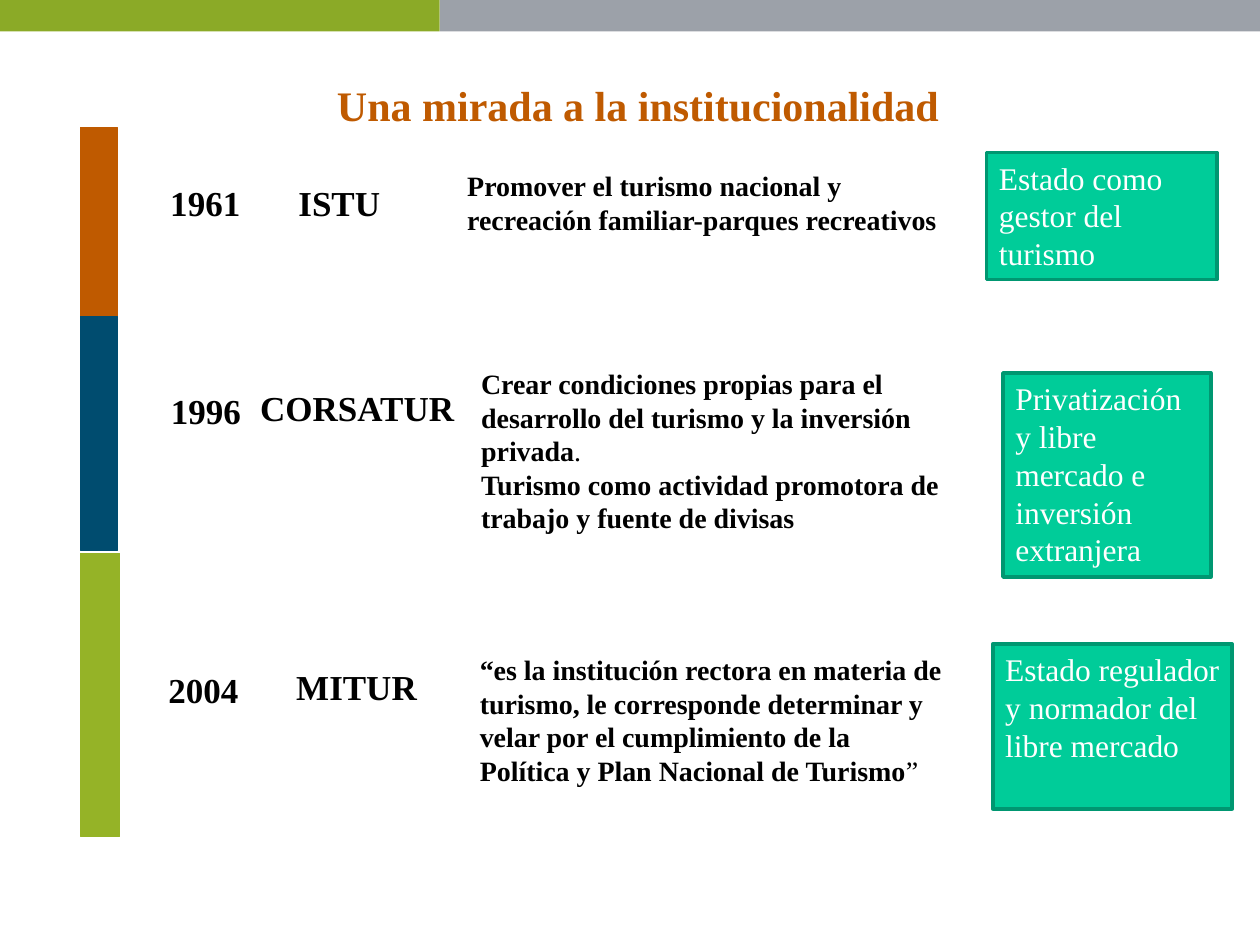
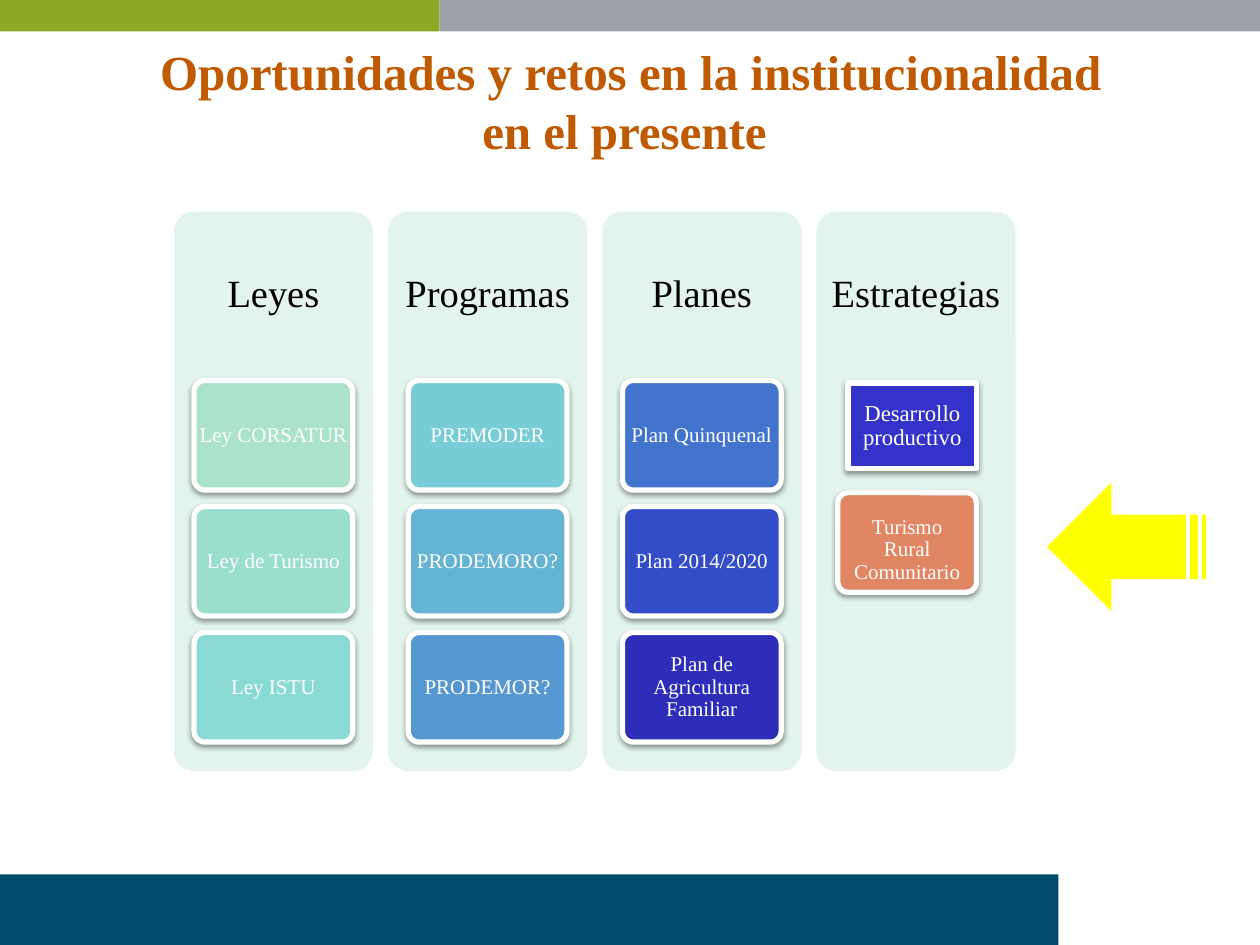
from lxml import etree
from pptx import Presentation
from pptx.dml.color import RGBColor as Rgb
from pptx.enum.shapes import MSO_SHAPE as Shape
from pptx.enum.text import MSO_ANCHOR as Anchor, PP_ALIGN as Align
from pptx.oxml.ns import qn
from pptx.util import Inches, Pt

FONT = "Times New Roman"
COLORS = {
    "orange": "BF5A00", "navy": "004C6F", "lime": "95B327",
    "band_green": "8BAA27", "band_grey": "9CA1A9",
    "mint": "00CC99", "mint_edge": "009771", "panel": "E2F4EC",
    "indigo": "3333CC", "coral": "E08662", "yellow": "FFFF00",
    "white": "FFFFFF", "black": "000000",
}

CENTERED = {"alignment": Align.CENTER}
TIGHT = {"alignment": Align.CENTER, "line_spacing": 0.9}
SPACIOUS = {"alignment": Align.CENTER, "line_spacing": 1.5, "space_before": Pt(3)}
TITLE = {"alignment": Align.CENTER, "space_before": Pt(4)}

TIMELINE_BARS = [
    ((0.64, 1.01, 0.29, 1.5), "orange"),
    ((0.64, 4.39, 0.31, 2.25), "lime"),
    ((0.64, 2.51, 0.29, 1.86), "navy"),
]
YEARS = [
    ("1961", (1.06, 1.39, 1.14, 0.43)),
    ("1996", (1.1, 3.04, 1.07, 0.43)),
    ("2004", (1.15, 5.26, 0.93, 0.43)),
]
INSTITUTIONS = [
    ("ISTU", (2.27, 1.39, 1.13, 0.43), {}),
    ("CORSATUR", (1.78, 3.02, 2.11, 0.43), CENTERED),
    ("MITUR", (2.17, 5.23, 1.32, 0.43), CENTERED),
]
MISSIONS = [
    ((3.61, 1.29, 4.05, 0.64), [
        [("Promover el turismo nacional y recreación familiar-parques recreativos", True)],
    ]),
    ((3.72, 2.86, 4.1, 1.45), [
        [("Crear condiciones propias para el desarrollo del turismo y la inversión privada", True),
         (".", False)],
        [("Turismo como actividad promotora de trabajo y fuente de divisas", True)],
    ]),
    ((3.71, 5.13, 3.87, 1.18), [
        [("“es la institución rectora en materia de turismo, le corresponde determinar y "
          "velar por el cumplimiento de la Política y Plan Nacional de Turismo", True),
         ("”", False)],
    ]),
]
STATE_ROLES = [
    ("Estado como gestor del turismo", (7.83, 1.21, 1.83, 1.01)),
    ("Privatización y libre mercado e inversión extranjera", (7.96, 2.96, 1.65, 1.62)),
    ("Estado regulador y normador del libre mercado", (7.88, 5.11, 1.9, 1.31)),
]
COLUMNS = [
    ("Leyes", [("Ley CORSATUR", "AAE2CA"), ("Ley de Turismo", "9ADECD"), ("Ley ISTU", "89DAD4")]),
    ("Programas", [("PREMODER", "78CCD6"), ("PRODEMORO?", "66B4D3"), ("PRODEMOR?", "5597D0")]),
    ("Planes", [("Plan Quinquenal", "4374CD"), ("Plan 2014/2020", "334DC8"),
                ("Plan de Agricultura Familiar", "2D2DB9")]),
    ("Estrategias", []),
]


def color(name):
    return Rgb.from_string(COLORS.get(name, name))


def apply(target, values):
    for name, value in values.items():
        setattr(target, name, value)


def write(shape, content, size, ink="black", bold=False, layout=None,
          anchor=Anchor.TOP, inset=(0.1, 0.05)):
    frame = shape.text_frame
    across, down = map(Inches, inset)
    apply(frame, {"word_wrap": True, "vertical_anchor": anchor,
                  "margin_left": across, "margin_right": across,
                  "margin_top": down, "margin_bottom": down})
    paragraphs = [[(content, bold)]] if isinstance(content, str) else content
    for index, spans in enumerate(paragraphs):
        para = frame.add_paragraph() if index else frame.paragraphs[0]
        apply(para, {"alignment": Align.LEFT, **(layout or {})})
        for words, heavy in spans:
            span = para.add_run()
            span.text = words
            apply(span.font, {"name": FONT, "size": Pt(size), "bold": heavy})
            span.font.color.rgb = color(ink)


def add_text(page, place, content, size, **style):
    box = page.shapes.add_textbox(*map(Inches, place))
    write(box, content, size, **style)


def add_block(page, place, fill, line=None, width=0.75, kind=Shape.RECTANGLE):
    block = page.shapes.add_shape(kind, *map(Inches, place))
    block.shadow.inherit = False
    block.fill.solid()
    block.fill.fore_color.rgb = color(fill)
    if line:
        block.line.color.rgb = color(line)
        block.line.width = Pt(width)
    else:
        block.line.fill.background()
    if kind == Shape.ROUNDED_RECTANGLE:
        block.adjustments[0] = 0.1
    return block


def add_card(page, place, fill, kind=Shape.ROUNDED_RECTANGLE):
    card = add_block(page, place, fill, "white", 3, kind)
    effects = card.element.spPr.find(qn("a:effectLst"))
    shadow = etree.SubElement(effects, qn("a:outerShdw"), blurRad=str(Pt(3.1)),
                              dist=str(Pt(1.6)), dir="5400000", rotWithShape="0")
    tone = etree.SubElement(shadow, qn("a:srgbClr"), val=COLORS["black"])
    etree.SubElement(tone, qn("a:alpha"), val="38000")
    return card


def add_page(deck):
    page = deck.slides.add_slide(deck.slide_layouts[6])
    add_block(page, (0, 0, 3.49, 0.25), "band_green")
    add_block(page, (3.49, 0, 6.51, 0.25), "band_grey")
    return page


def add_column(page, left, heading, cards):
    top, header_height, step = 1.68, 1.33, 1
    add_block(page, (left, top, 1.58, 4.44), "panel", kind=Shape.ROUNDED_RECTANGLE)
    add_text(page, (left, top, 1.58, header_height), heading, 22, layout=TIGHT,
             anchor=Anchor.MIDDLE, inset=(0.09, 0.09))
    for row, (label, fill) in enumerate(cards):
        card = add_card(page, (left + 0.16, 3.02 + row * step, 1.26, 0.87), fill)
        write(card, label, 12, ink="white", layout=TIGHT, anchor=Anchor.MIDDLE, inset=(0, 0.03))


def build_history(deck):
    page = add_page(deck)
    add_text(page, (2.55, 0.38, 5.11, 0.63), "Una mirada a la institucionalidad ", 24,
             ink="orange", bold=True, layout=SPACIOUS)
    for place, fill in TIMELINE_BARS:
        add_block(page, place, fill, fill)
    for year, place in YEARS:
        add_text(page, place, year, 20, bold=True, layout=CENTERED)
    for name, place, layout in INSTITUTIONS:
        add_text(page, place, name, 20, bold=True, layout=layout)
    for place, mission in MISSIONS:
        add_text(page, place, mission, 16)
    for role, place in STATE_ROLES:
        write(add_block(page, place, "mint", "mint_edge", 2), role, 18, ink="white")


def build_opportunities(deck):
    page = add_page(deck)
    add_text(page, (1.13, 0.28, 7.75, 1.04),
             "Oportunidades y retos en la institucionalidad en el presente ", 28,
             ink="orange", bold=True, layout=TITLE)
    for index, (heading, cards) in enumerate(COLUMNS):
        add_column(page, 1.38 + index * 1.7, heading, cards)
    strategy = {"ink": "white", "layout": TIGHT, "anchor": Anchor.MIDDLE, "inset": (0.04, 0.03)}
    development = add_card(page, (6.73, 3.04, 1.02, 0.68), "indigo", Shape.RECTANGLE)
    write(development, "Desarrollo productivo", 13, **strategy)
    add_card(page, (6.65, 3.91, 1.1, 0.79), "coral")
    add_text(page, (6.73, 4.06, 0.94, 0.61), "Turismo Rural Comunitario", 12, **strategy)
    arrow = add_block(page, (8.31, 3.83, 1.26, 1.02), "yellow", kind=Shape.STRIPED_RIGHT_ARROW)
    arrow.rotation = 180
    add_block(page, (0, 6.94, 8.4, 0.56), "navy")


def main():
    deck = Presentation()
    apply(deck, {"slide_width": Inches(10), "slide_height": Inches(7.5)})
    build_history(deck)
    build_opportunities(deck)
    deck.save("out.pptx")


if __name__ == "__main__":
    main()
